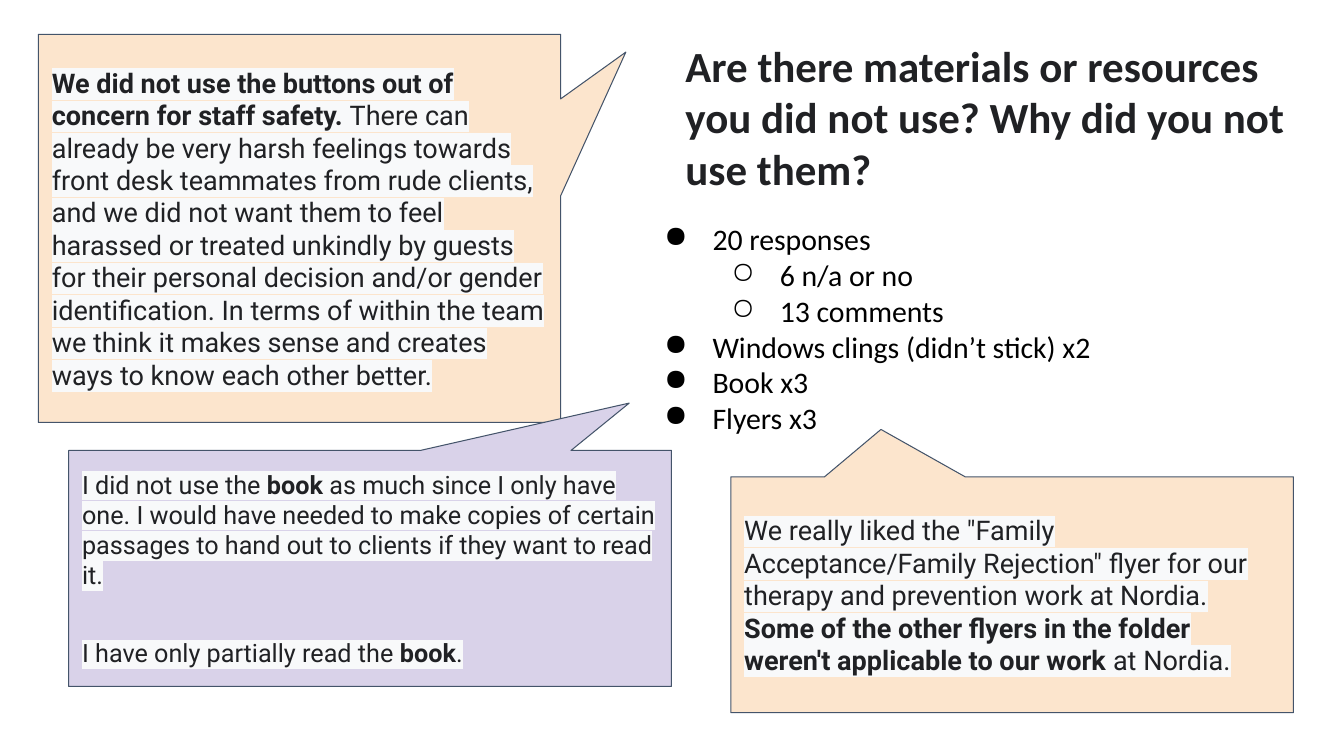
from dataclasses import dataclass
from typing import NamedTuple

from lxml import etree
from pptx import Presentation
from pptx.dml.color import RGBColor
from pptx.enum import shapes, text
from pptx.oxml import ns
from pptx.util import Pt


@dataclass(frozen=True)
class Theme:
    heading_font: str = "Calibri"
    quote_font: str = "Roboto"
    ink: str = "202124"
    black: str = "000000"
    white: str = "FFFFFF"
    highlight: str = "F8F9FA"
    peach: str = "FCE5CD"
    lavender: str = "D9D2E9"
    outline: str = "44546A"
    title_size: float = 30.7
    list_size: float = 21.3
    quote_size: float = 19.3
    small_quote_size: float = 18
    inset: float = 9.6


THEME = Theme()


class Box(NamedTuple):
    left: float
    top: float
    width: float
    height: float

    def lengths(self) -> list[Pt]:
        return [Pt(value) for value in self]


class Bullet(NamedTuple):
    words: str
    level: int = 0


class Span(NamedTuple):
    words: str
    bold: bool = False


class Quote(NamedTuple):
    spans: list[Span]
    space_before: float = 0
    line_spacing: float = 1.0


@dataclass
class Callout:
    box: Box
    tip: tuple[float, float]
    fill: str
    size: float
    quotes: list[Quote]


TITLE = "Are there materials or resources you did not use? Why did you not use them?"

BULLETS = [
    Bullet("20 responses"),
    Bullet("6 n/a or no", 1),
    Bullet("13 comments", 1),
    Bullet("Windows clings (didn’t stick) x2"),
    Bullet("Book x3"),
    Bullet("Flyers x3"),
]

CALLOUTS = [
    Callout(Box(27.4, 24.5, 373, 277.2), (0.625, -0.454), THEME.peach, THEME.quote_size, [
        Quote([
            Span("We did not use the buttons out of concern for staff safety. ", True),
            Span("There can already be very harsh feelings towards front desk teammates "
                 "from rude clients, and we did not want them to feel harassed or treated "
                 "unkindly by guests for their personal decision and/or gender "
                 "identification. In terms of within the team we think it makes sense and "
                 "creates ways to know each other better."),
        ]),
    ]),
    Callout(Box(522, 340.6, 401.8, 168.5), (-0.233, -0.701), THEME.peach, THEME.quote_size, [
        Quote([Span('We really liked the "Family')]),
        Quote([
            Span('Acceptance/Family Rejection" flyer for our therapy and prevention work '
                 "at Nordia. "),
            Span("Some of the other flyers in the folder weren't applicable to our work ", True),
            Span("at Nordia."),
        ]),
    ]),
    Callout(Box(49, 321.8, 430.6, 168.5), (0.43, -0.701), THEME.lavender,
            THEME.small_quote_size, [
        Quote([
            Span("I did not use the "),
            Span("book ", True),
            Span("as much since I only have one. I would have needed to make copies of "
                 "certain passages to hand out to clients if they want to read it."),
        ]),
        Quote([Span("I have only partially read the "), Span("book", True), Span(".")],
              space_before=25, line_spacing=1.43),
    ]),
]


def color(value: str) -> RGBColor:
    return RGBColor.from_string(value)


def style_font(font, name: str, size: float, ink: str, bold: bool = False) -> None:
    font.name, font.size, font.bold = name, Pt(size), bold
    font.color.rgb = color(ink)


def highlight_run(run, value: str) -> None:
    """Put the highlight right after the fill, where the schema expects it."""
    highlight = etree.Element(ns.qn("a:highlight"))
    etree.SubElement(highlight, ns.qn("a:srgbClr"), val=value)
    run.font._element.find(ns.qn("a:solidFill")).addnext(highlight)


def set_frame(frame, anchor) -> None:
    frame.word_wrap = True
    frame.auto_size = text.MSO_AUTO_SIZE.NONE
    frame.vertical_anchor = anchor
    frame.margin_left = frame.margin_right = Pt(THEME.inset)
    frame.margin_top = frame.margin_bottom = Pt(THEME.inset)


def paragraph_at(frame, index: int):
    return frame.paragraphs[0] if index == 0 else frame.add_paragraph()


def add_title(slide) -> None:
    title = slide.shapes.title
    title.left, title.top, title.width, title.height = Box(480, 24.5, 451.4, 123.8).lengths()
    set_frame(title.text_frame, text.MSO_ANCHOR.BOTTOM)
    title.text_frame.text = TITLE
    paragraph = title.text_frame.paragraphs[0]
    paragraph.alignment = text.PP_ALIGN.LEFT
    run = paragraph.runs[0]
    style_font(run.font, THEME.heading_font, THEME.title_size, THEME.ink, bold=True)
    highlight_run(run, THEME.white)


def set_bullet(paragraph, level: int) -> None:
    paragraph.level = level
    properties = paragraph._p.get_or_add_pPr()
    properties.set("marL", str(Pt(48 * (level + 1))))
    properties.set("indent", str(Pt(-34.6)))
    bullet_color = etree.SubElement(properties, ns.qn("a:buClr"))
    etree.SubElement(bullet_color, ns.qn("a:srgbClr"), val=THEME.black)
    etree.SubElement(properties, ns.qn("a:buChar"), char="●○"[level])


def add_bullets(slide) -> None:
    frame = slide.shapes.add_textbox(*Box(451.4, 148.3, 480.2, 168.5).lengths()).text_frame
    set_frame(frame, text.MSO_ANCHOR.TOP)
    for index, bullet in enumerate(BULLETS):
        paragraph = paragraph_at(frame, index)
        paragraph.text = bullet.words
        set_bullet(paragraph, bullet.level)
        style_font(paragraph.runs[0].font, THEME.heading_font, THEME.list_size, THEME.black)


def add_callout(slide, callout: Callout) -> None:
    shape = slide.shapes.add_shape(
        shapes.MSO_SHAPE.ROUNDED_RECTANGULAR_CALLOUT, *callout.box.lengths())
    for index, value in enumerate((*callout.tip, 0)):
        shape.adjustments[index] = value
    shape.shadow.inherit = False
    shape.fill.solid()
    shape.fill.fore_color.rgb = color(callout.fill)
    shape.line.color.rgb = color(THEME.outline)
    shape.line.width = Pt(0.75)
    set_frame(shape.text_frame, text.MSO_ANCHOR.MIDDLE)
    for index, quote in enumerate(callout.quotes):
        paragraph = paragraph_at(shape.text_frame, index)
        paragraph.alignment = text.PP_ALIGN.LEFT
        paragraph.space_before = Pt(quote.space_before)
        paragraph.line_spacing = quote.line_spacing
        for span in quote.spans:
            run = paragraph.add_run()
            run.text = span.words
            style_font(run.font, THEME.quote_font, callout.size, THEME.ink, span.bold)
            highlight_run(run, THEME.highlight)


def main() -> None:
    presentation = Presentation()
    presentation.slide_width, presentation.slide_height = Pt(960), Pt(540)
    slide = presentation.slides.add_slide(presentation.slide_layouts.get_by_name("Title Only"))
    add_title(slide)
    add_bullets(slide)
    for callout in CALLOUTS:
        add_callout(slide, callout)
    presentation.save("out.pptx")


if __name__ == "__main__":
    main()
